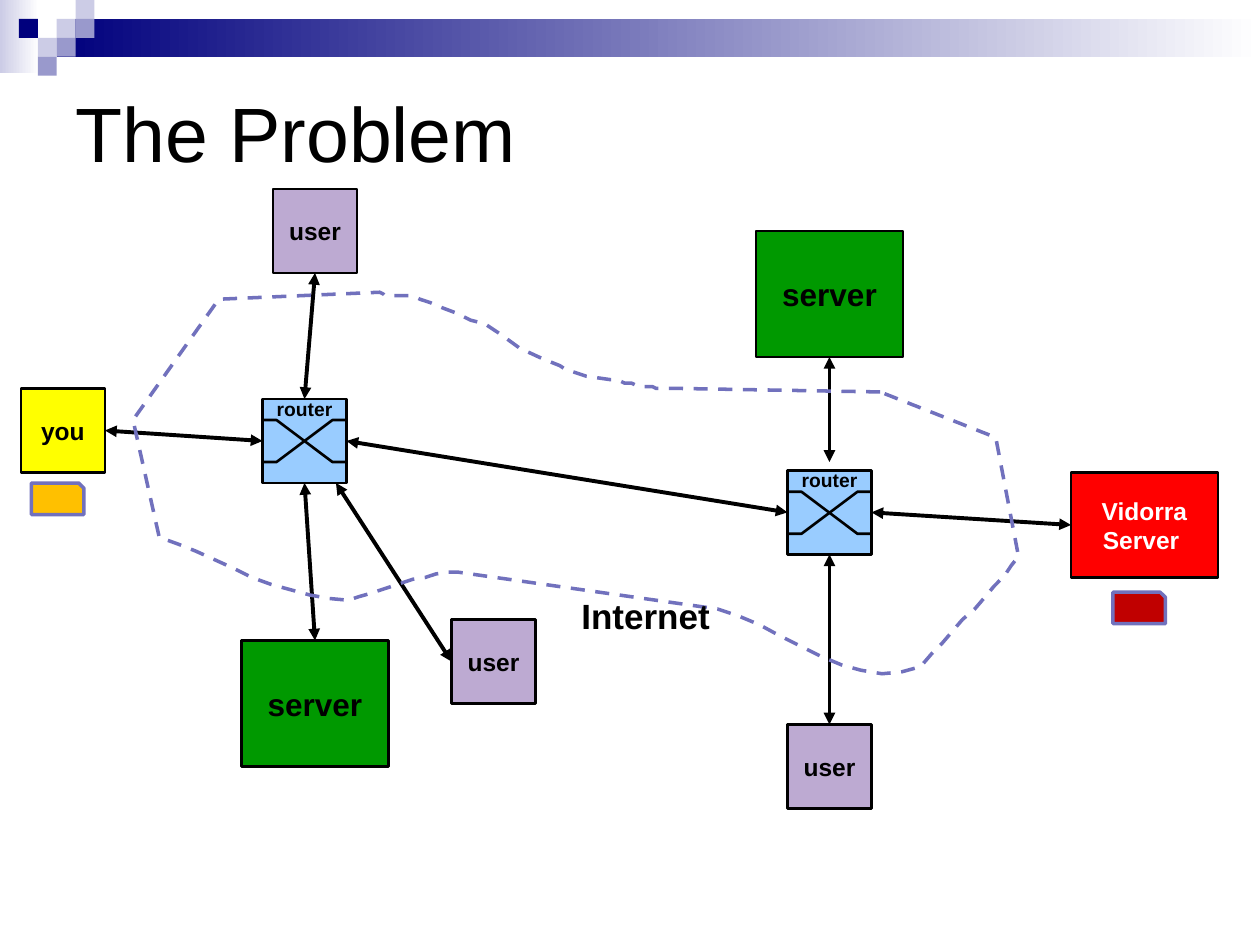
"""Build a slide of users, servers and routers joined through the Internet."""
import pptx
import pptx.util
import pptx.dml.color
import pptx.enum.dml
import pptx.enum.shapes
import pptx.enum.text
import pptx.oxml
import pptx.oxml.ns

Pt = pptx.util.Pt
KIND = pptx.enum.shapes.MSO_SHAPE
HUE = {
    "black": "000000", "white": "FFFFFF", "navy": "00007D", "pale": "CCCCE6",
    "lilac": "9999CC", "mauve": "BDAAD2", "yellow": "FFFF00", "red": "FF0000",
    "green": "009900", "sky": "99CCFF", "edge": "7171BD", "amber": "FFC000",
    "wine": "C00000",
}
FADES = [((0, 0, 22.3, 41.8), "pale"), ((32.4, 10.8, 687.6, 21.6), "navy")]
CELL = 10.8
TILES = [
    (3, 1, "pale"), (4, 0, "pale"), (4, 1, "lilac"), (2, 2, "pale"),
    (1, 1, "navy"), (3, 2, "lilac"), (2, 3, "lilac"),
]
NODES = {
    "north": ("user", (156, 108, 48, 48), "mauve", 14, "black"),
    "you": ("you", (12, 222, 48, 48), "yellow", 14, "black"),
    "east": ("user", (450, 414, 48, 48), "mauve", 14, "black"),
    "video": ("Vidorra Server ", (612, 270, 84, 60), "red", 14, "white"),
    "south": ("user", (258, 354, 48, 48), "mauve", 14, "black"),
    "low": ("server", (138, 366, 84, 72), "green", 18, "black"),
    "high": ("server", (432, 132, 84, 72), "green", 18, "black"),
    "left": ("", (150, 228, 48, 48), "sky", 11, "black"),
    "right": ("", (450, 268.8, 48, 48), "sky", 11, "black"),
}
ROUTERS = ["left", "right"]
TOP, LEFT, BOTTOM, RIGHT = range(4)
LINKS = [
    (("you", RIGHT), ("left", LEFT)),
    (("north", BOTTOM), ("left", TOP)),
    (("left", RIGHT), ("right", LEFT)),
    (("right", BOTTOM), ("east", TOP)),
    (("video", LEFT), ("right", RIGHT)),
    (("left", BOTTOM), ("low", TOP)),
    (("high", BOTTOM), (474, 264)),
    ((192, 276), ("south", LEFT)),
]
CLOUD = [
    (503, 224), (389, 222), (382, 222, 375, 222, 369, 221),
    (362, 220, 356, 218, 349, 217), (335, 215), (323, 211), (320, 209),
    (310, 205), (297, 199), (286, 191), (277, 185), (269, 183), (261, 179),
    (253, 176), (246, 173), (240, 171), (238, 170), (224, 167, 223, 172, 217, 167),
    (125, 171), (76, 240), (91, 307), (127, 319, 161, 343, 199, 343),
    (220, 338, 240, 327, 262, 327), (410, 348), (449, 359, 490, 398, 526, 381),
    (544, 359, 571, 335, 582, 318), (569, 250),
]
PACKETS = [((18, 276), "amber"), ((636, 338.4), "wine")]


def tint(name):
    return pptx.dml.color.RGBColor.from_string(HUE[name])


def stroke(item, name, width):
    item.line.color.rgb = tint(name)
    item.line.width = Pt(width)


def block(box, fill=None, edge=None, width=1.5, kind=KIND.RECTANGLE):
    shape = slide.shapes.add_shape(kind, *map(Pt, box))
    shape.shadow.inherit = False
    if fill:
        shape.fill.solid()
        shape.fill.fore_color.rgb = tint(fill)
    if edge:
        stroke(shape, edge, width)
    else:
        shape.line.fill.background()
    return shape


def write(shape, text, size, color="black", bold=True, center=True, middle=True, wrap=True):
    frame = shape.text_frame
    frame.word_wrap = wrap
    anchor = pptx.enum.text.MSO_ANCHOR
    frame.vertical_anchor = anchor.MIDDLE if middle else anchor.TOP
    para = frame.paragraphs[0]
    para.text = text
    align = pptx.enum.text.PP_ALIGN
    para.alignment = align.CENTER if center else align.LEFT
    font = para.font
    font.name, font.size, font.bold = "Arial", Pt(size), bold
    font.color.rgb = tint(color)


def label(box, text, size, **style):
    write(slide.shapes.add_textbox(*map(Pt, box)), text, size, **style)


def trace(points, color, width, close=False):
    pen = slide.shapes.build_freeform(*points[0], scale=Pt(1))
    pen.add_line_segments(points[1:], close=close)
    shape = pen.convert_to_shape()
    shape.shadow.inherit = False
    shape.fill.background()
    stroke(shape, color, width)
    return shape


def bend(steps, count=10):
    points = [steps[0]]
    for step in steps[1:]:
        if len(step) == 2:
            points.append(step)
            continue
        knots = [points[-1], step[:2], step[2:4], step[4:]]
        for i in range(1, count + 1):
            t = i / count
            parts = ((1 - t) ** 3, 3 * t * (1 - t) ** 2, 3 * t * t * (1 - t), t ** 3)
            points.append(tuple(
                round(sum(p * k[axis] for p, k in zip(parts, knots)), 2)
                for axis in (0, 1)))
    return points


def place(end):
    if end[0] not in NODES:
        return end
    x, y, w, h = NODES[end[0]][1]
    return [(x + w / 2, y), (x, y + h / 2), (x + w / 2, y + h), (x + w, y + h / 2)][end[1]]


def link(start, stop):
    line = slide.shapes.add_connector(
        pptx.enum.shapes.MSO_CONNECTOR.STRAIGHT, *map(Pt, place(start) + place(stop)))
    if start[0] in made:
        line.begin_connect(made[start[0]], start[1])
    if stop[0] in made:
        line.end_connect(made[stop[0]], stop[1])
    stroke(line, "black", 2.25)
    for tag in ("a:headEnd", "a:tailEnd"):
        tip = pptx.oxml.ns.qn(tag)
        line.line._get_or_add_ln().makeelement(tip, {})
        node = pptx.oxml.parse_xml(f'<{tag} {pptx.oxml.ns.nsdecls("a")} type="triangle"/>')
        line.line._get_or_add_ln().append(node)
    line._element.spPr.append(
        pptx.oxml.parse_xml(f'<a:effectLst {pptx.oxml.ns.nsdecls("a")}/>'))


deck = pptx.Presentation()
deck.slide_width, deck.slide_height = Pt(720), Pt(540)
slide = deck.slides.add_slide(deck.slide_layouts[6])

for box, hue in FADES:
    band = block(box)
    band.fill.gradient()
    band.fill.gradient_angle = 0
    for stop, name in zip(band.fill.gradient_stops, (hue, "white")):
        stop.color.rgb = tint(name)
for col, row, hue in TILES:
    block((col * CELL, row * CELL, CELL, CELL), hue)
label((36, 36, 648, 78), "The Problem", 44, bold=False, center=False)

made = {}
for name, (text, box, fill, size, color) in NODES.items():
    made[name] = block(box, fill, "black")
    if text:
        write(made[name], text, size, color)
for start, stop in LINKS:
    link(start, stop)
for name in ROUTERS:
    x, y, w, h = NODES[name][1]
    high, low = y + h / 4, y + h * 3 / 4
    for a, b in ((x, x + w), (x + w, x)):
        turn = 8 if a < b else -8
        trace([(a, high), (a + turn, high), (b - turn, low), (b, low)], "black", 1.5)
    label((x, y - 4.5, w, 21), "router", 11, middle=False, wrap=False)

cloud = trace(bend(CLOUD), "edge", 2, close=True)
cloud.line.dash_style = pptx.enum.dml.MSO_LINE.DASH
label((318, 336, 102, 31.5), "Internet", 20, middle=False)
for spot, hue in PACKETS:
    block(spot + (30, 18), hue, "edge", 2, KIND.SNIP_1_RECTANGLE)

deck.save("out.pptx")
